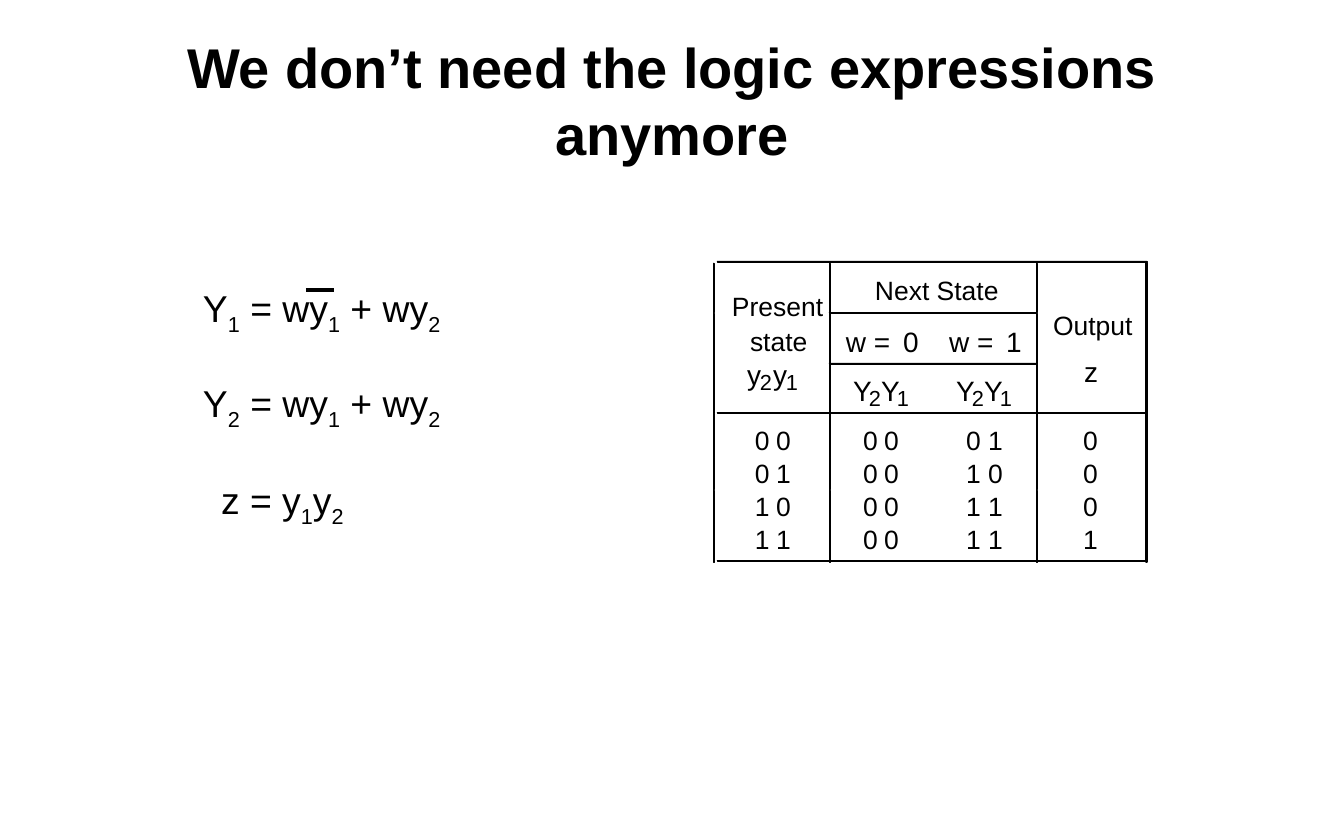
from dataclasses import dataclass
from itertools import pairwise, product

from lxml import etree
from pptx import Presentation
from pptx.dml.color import RGBColor
from pptx.enum.shapes import MSO_CONNECTOR, MSO_SHAPE
from pptx.enum.text import MSO_ANCHOR, MSO_AUTO_SIZE, PP_ALIGN
from pptx.oxml.ns import qn
from pptx.util import Pt

SCALE = 914400 / 112
STRAIGHT = MSO_CONNECTOR.STRAIGHT
RECT = MSO_SHAPE.RECTANGLE
TOP = MSO_ANCHOR.TOP
GROW = MSO_AUTO_SIZE.SHAPE_TO_FIT_TEXT
LEFT, CENTER = PP_ALIGN.LEFT, PP_ALIGN.CENTER


@dataclass(frozen=True)
class Theme:
    font: str = "Arial"
    ink: RGBColor = RGBColor(0, 0, 0)
    title: int = 36
    math: int = 24
    label: int = 17
    sign: int = 18
    sub: int = 14
    edge: float = 0.5
    side: float = 1.25
    bar: float = 2.25


THEME = Theme()
THICK = 2
POSTS = [713, 829, 1036, 1146]
LEVELS = [263, 313, 364, 413, 457, 490, 524, 562]
RULES = [(717, 430, 261), (829, 207, 312), (829, 207, 363),
         (717, 430, 412), (717, 430, 560)]
LABELS = [("Present", 732, 290, 100), ("state", 750, 325, 66),
          ("Next State", 875, 274, 132), ("Output", 1053, 309, 81)]
STATES = ["00 00 01 0", "01 00 10 0", "10 00 11 0", "11 00 11 1"]
FIRST, PITCH, SHIFT = 424, 33, 103


def px(count):
    return round(count * SCALE)


def apply(item, values):
    for name, value in values.items():
        setattr(item, name, value)


def add_run(para, text, size, bold=False, drop=0):
    run = para.add_run()
    run.text = text
    apply(run.font, {"name": THEME.font, "size": Pt(size), "bold": bold})
    run.font.color.rgb = THEME.ink
    if drop:
        run.font._rPr.set("baseline", str(-1000 * drop))


def add_box(slide, left, top, width, height, values):
    box = slide.shapes.add_textbox(px(left), px(top), px(width), px(height))
    apply(box.text_frame, {"vertical_anchor": TOP, **values})
    return box.text_frame.paragraphs[0]


def add_title(slide, text):
    para = add_box(slide, 112, 27, 1120, 96, {"word_wrap": True})
    para.alignment = CENTER
    add_run(para, text, THEME.title, bold=True)


def add_formula(slide, text, left, top, width):
    para = add_box(slide, left, top, width, 57,
                   {"word_wrap": False, "auto_size": GROW})
    para.alignment = LEFT
    first, *parts = text.split("_")
    add_run(para, first, THEME.math)
    for part in parts:
        add_run(para, part[0], THEME.math, drop=25)
        if part[1:]:
            add_run(para, part[1:], THEME.math)


def add_bar(slide, left, right, top):
    bar = slide.shapes.add_connector(STRAIGHT, px(left), px(top), px(right), px(top))
    bar.line.width = Pt(THEME.bar)
    bar.line.color.rgb = THEME.ink
    etree.SubElement(bar._element.spPr, qn("a:effectLst"))


def add_rule(slide, left, top, width, height, edge=THEME.edge):
    rule = slide.shapes.add_shape(RECT, px(left), px(top), px(width), px(height))
    rule.shadow.inherit = False
    rule.fill.solid()
    rule.fill.fore_color.rgb = THEME.ink
    rule.line.color.rgb = THEME.ink
    rule.line.width = Pt(edge)


def add_text(slide, text, left, top, size, width=22):
    para = add_box(slide, left, top, width, 33, {
        "word_wrap": False, "auto_size": GROW, "margin_left": 0,
        "margin_right": 0, "margin_top": 0, "margin_bottom": 0})
    para.alignment = LEFT
    add_run(para, text, size)


def add_pair(slide, letter, left, top, inner, step):
    for index, digit in enumerate("21"):
        start = left + index * step
        add_text(slide, letter, start, top, THEME.sign)
        add_text(slide, digit, start + inner, top + 11, THEME.sub, 18)


def add_grid(slide):
    for left, (top, end) in product(POSTS, pairwise(LEVELS)):
        edge = THEME.side if left == POSTS[-1] else THEME.edge
        add_rule(slide, left, top, THICK - 1, end - top, edge)
    for left, width, top in RULES:
        add_rule(slide, left, top, width, THICK - 1)


def add_heads(slide):
    for text, left, top, width in LABELS:
        add_text(slide, text, left, top, THEME.label, width)
    add_text(slide, "z", 1084, 355, THEME.sign)
    add_pair(slide, "y", 747, 358, 13, 26)
    for index in range(2):
        shift = index * SHIFT
        for text, left in [("w", 846), ("=", 874), (str(index), 903)]:
            add_text(slide, text, left + shift, 325, THEME.sign)
        add_pair(slide, "Y", 853 + shift, 374, 16, 28)


def add_states(slide):
    for row, state in enumerate(STATES):
        top = FIRST + row * PITCH
        now, low, high, out = state.split()
        for pair, left in [(now, 755), (low, 863)]:
            for index, digit in enumerate(pair):
                add_text(slide, digit, left + index * 21, top, THEME.label)
        add_text(slide, " ".join(high), 966, top, THEME.label, 37)
        add_text(slide, out, 1083, top, THEME.label)


def main():
    deck = Presentation()
    apply(deck, {"slide_width": px(1344), "slide_height": px(840)})
    slide = deck.slides.add_slide(deck.slide_layouts[6])
    add_title(slide, "We don’t need the logic expressions anymore")
    add_formula(slide, "z = y_1y_2", 210, 472, 150)
    add_formula(slide, "Y_1 = wy_1 + wy_2", 192, 280, 274)
    add_bar(slide, 306, 334, 290)
    add_formula(slide, "Y_2 = wy_1 + wy_2", 192, 375, 268)
    add_grid(slide)
    add_heads(slide)
    add_states(slide)
    deck.save("out.pptx")


if __name__ == "__main__":
    main()
